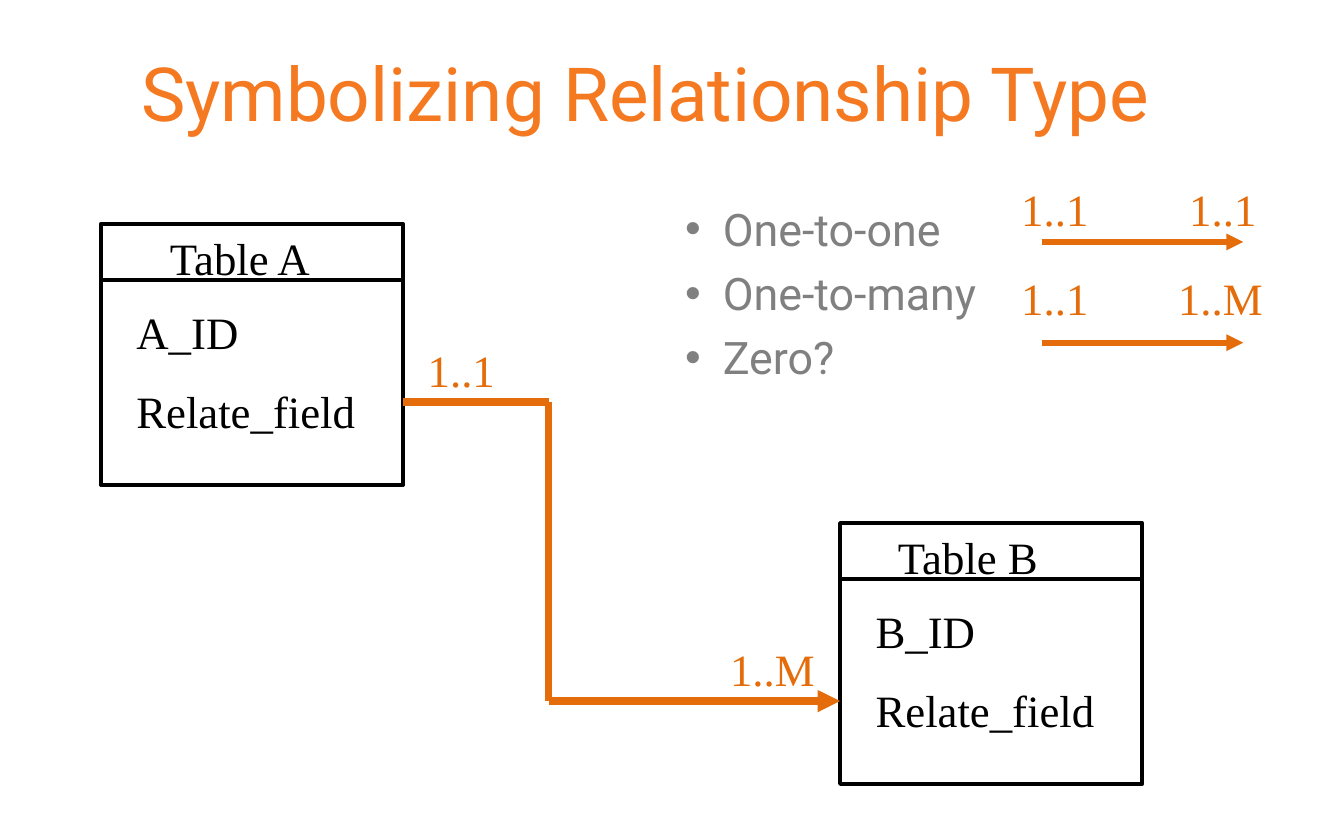
from dataclasses import dataclass

from lxml import etree
from pptx import Presentation
from pptx.dml.color import RGBColor
from pptx.enum.shapes import MSO_CONNECTOR, MSO_SHAPE
from pptx.enum.text import MSO_ANCHOR, PP_ALIGN
from pptx.oxml.ns import qn
from pptx.util import Inches, Pt

STRAIGHT = MSO_CONNECTOR.STRAIGHT
RECTANGLE = MSO_SHAPE.RECTANGLE
MIDDLE = MSO_ANCHOR.MIDDLE
CENTER = PP_ALIGN.CENTER

COLUMNS, ROWS = 120, 75
TITLE_ONLY = 5


@dataclass(frozen=True)
class Theme:
    heading_font: str = "Roboto"
    diagram_font: str = "Times New Roman"
    title_size: float = 40
    text_size: float = 24
    bullet_gap: float = 5.6
    field_gap: float = 13.8
    title: RGBColor = RGBColor(0xF4, 0x79, 0x20)
    bullets: RGBColor = RGBColor(0x80, 0x80, 0x80)
    ink: RGBColor = RGBColor(0, 0, 0)
    paper: RGBColor = RGBColor(0xFF, 0xFF, 0xFF)
    relation: RGBColor = RGBColor(0xE4, 0x6C, 0x0A)


class Diagram:
    def __init__(self, deck, theme):
        self.theme = theme
        self.slide = deck.slides.add_slide(deck.slide_layouts[TITLE_ONLY])
        self.column = deck.slide_width / COLUMNS
        self.row = deck.slide_height / ROWS

    def place(self, x, y):
        return round(x * self.column), round(y * self.row)

    def style(self, paragraph, font, size, color):
        paragraph.font.name = font
        paragraph.font.size = Pt(size)
        paragraph.font.color.rgb = color

    def title(self, words, x, y, width, height):
        heading = self.slide.shapes.title
        heading.left, heading.top = self.place(x, y)
        heading.width, heading.height = self.place(width, height)
        heading.text_frame.text = words
        heading.text_frame.vertical_anchor = MIDDLE
        paragraph = heading.text_frame.paragraphs[0]
        paragraph.alignment = CENTER
        self.style(paragraph, self.theme.heading_font, self.theme.title_size, self.theme.title)

    def text(self, lines, x, y, width, height, color, font=None, gap=0, bullet=False):
        box = self.slide.shapes.add_textbox(*self.place(x, y), *self.place(width, height))
        frame = box.text_frame
        frame.word_wrap = True
        frame.text = "\n".join(lines)
        for index, paragraph in enumerate(frame.paragraphs):
            if index:
                paragraph.space_before = Pt(gap)
            if bullet:
                self.bullet(paragraph)
            self.style(paragraph, font or self.theme.diagram_font, self.theme.text_size, color)

    def bullet(self, paragraph):
        properties = paragraph._p.get_or_add_pPr()
        indent = Inches(0.28)
        properties.set("marL", str(indent))
        properties.set("indent", str(-indent))
        etree.SubElement(properties, qn("a:buFont"), typeface="Arial")
        etree.SubElement(properties, qn("a:buChar"), char="•")

    def bullets(self, lines, x, y, width, height):
        theme = self.theme
        self.text(lines, x, y, width, height, theme.bullets, theme.heading_font, theme.bullet_gap, True)

    def line(self, start, end, color, weight, arrow=False):
        connector = self.slide.shapes.add_connector(STRAIGHT, *self.place(*start), *self.place(*end))
        connector.line.color.rgb = color
        connector.line.width = Pt(weight)
        if arrow:
            etree.SubElement(connector.line._get_or_add_ln(), qn("a:tailEnd"), type="triangle")
        etree.SubElement(connector._element.spPr, qn("a:effectLst"))

    def entity(self, name, fields, x, y, name_offset):
        theme, width, height = self.theme, 27, 23.3
        frame = self.slide.shapes.add_shape(RECTANGLE, *self.place(x, y), *self.place(width, height))
        frame.shadow.inherit = False
        frame.fill.solid()
        frame.fill.fore_color.rgb = theme.paper
        frame.line.color.rgb = theme.ink
        frame.line.width = Pt(2)
        self.line((x, y + 5), (x + width, y + 5), theme.ink, 2)
        self.text([name], x + name_offset, y, 19, 6.1, theme.ink)
        self.text(fields, x + 2, y + 6.6, 24, 13.3, theme.ink, gap=theme.field_gap)

    def cardinality(self, label, x, y):
        self.text([label], x, y, 10, 6.1, self.theme.relation)

    def relation(self, points, weight):
        last = len(points) - 2
        for index, (start, end) in enumerate(zip(points, points[1:])):
            self.line(start, end, self.theme.relation, weight, index == last)


def main():
    deck = Presentation()
    deck.slide_width, deck.slide_height = Inches(10), Inches(6.25)
    diagram = Diagram(deck, Theme())

    diagram.title("Symbolizing Relationship Type", 3.6, 1.9, 108, 12.5)
    diagram.bullets(["One-to-one", "One-to-many", "Zero?"], 60, 17.4, 41, 21.7)

    table_a, table_b = (9, 20), (75, 46.7)
    diagram.entity("Table A", ["A_ID", "Relate_field"], *table_a, name_offset=5)
    diagram.entity("Table B", ["B_ID", "Relate_field"], *table_b, name_offset=4)

    legend = [("1..1", 105, 15.6, 21.6), ("1..M", 104, 23.6, 30.6)]
    for target, target_x, label_y, arrow_y in legend:
        diagram.cardinality("1..1", 90, label_y)
        diagram.cardinality(target, target_x, label_y)
        diagram.relation([(93, arrow_y), (111, arrow_y)], 3)

    source_y, target_y = (top + 15.9 for _, top in (table_a, table_b))
    bend_x = 49
    diagram.relation([(36, source_y), (bend_x, source_y), (bend_x, target_y), (75, target_y)], 4)
    diagram.cardinality("1..1", 37, source_y - 5.9)
    diagram.cardinality("1..M", 64, target_y - 5.9)

    deck.save("out.pptx")


if __name__ == "__main__":
    main()
